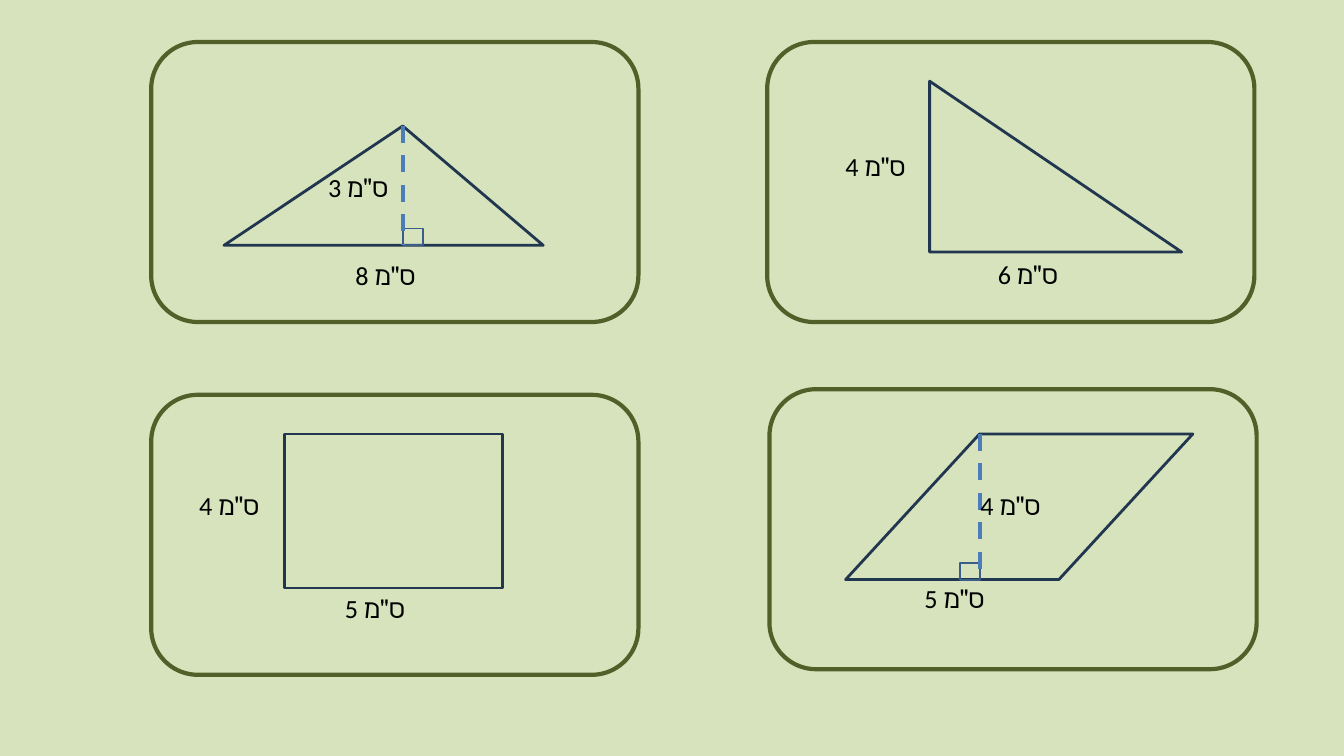
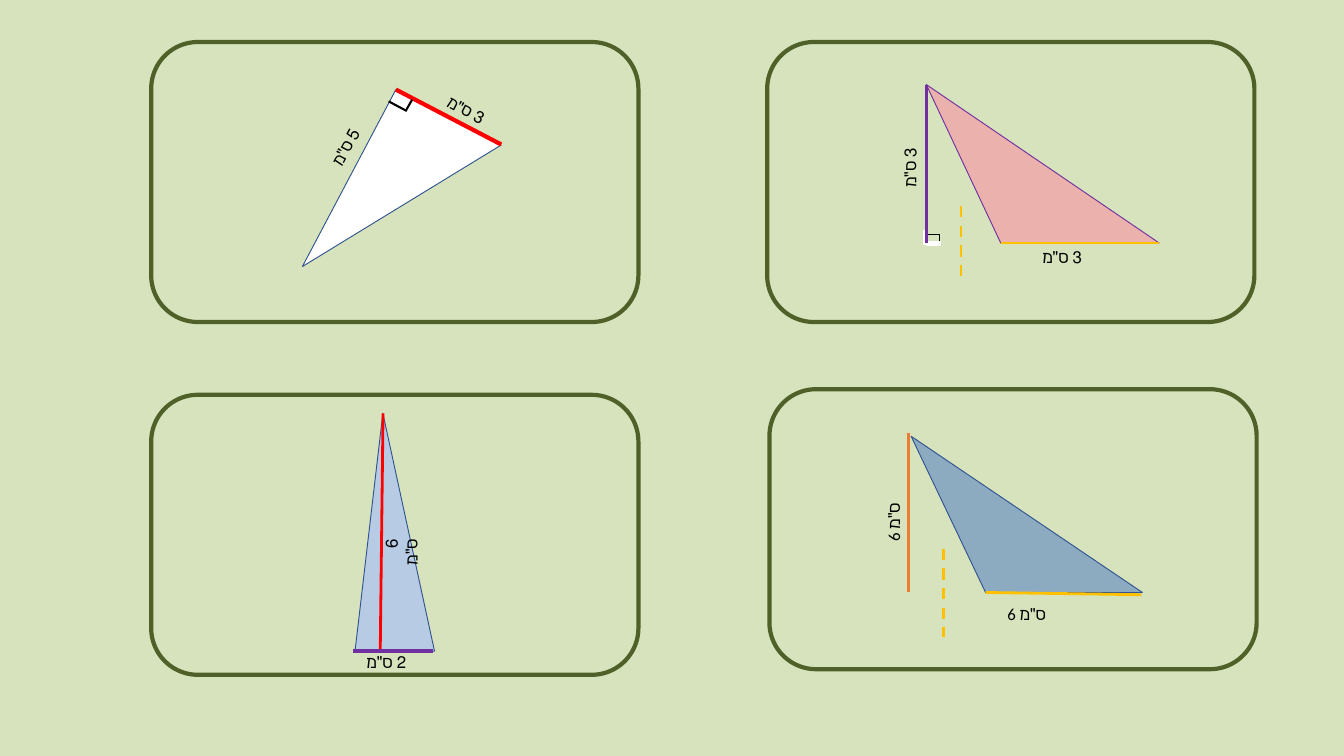
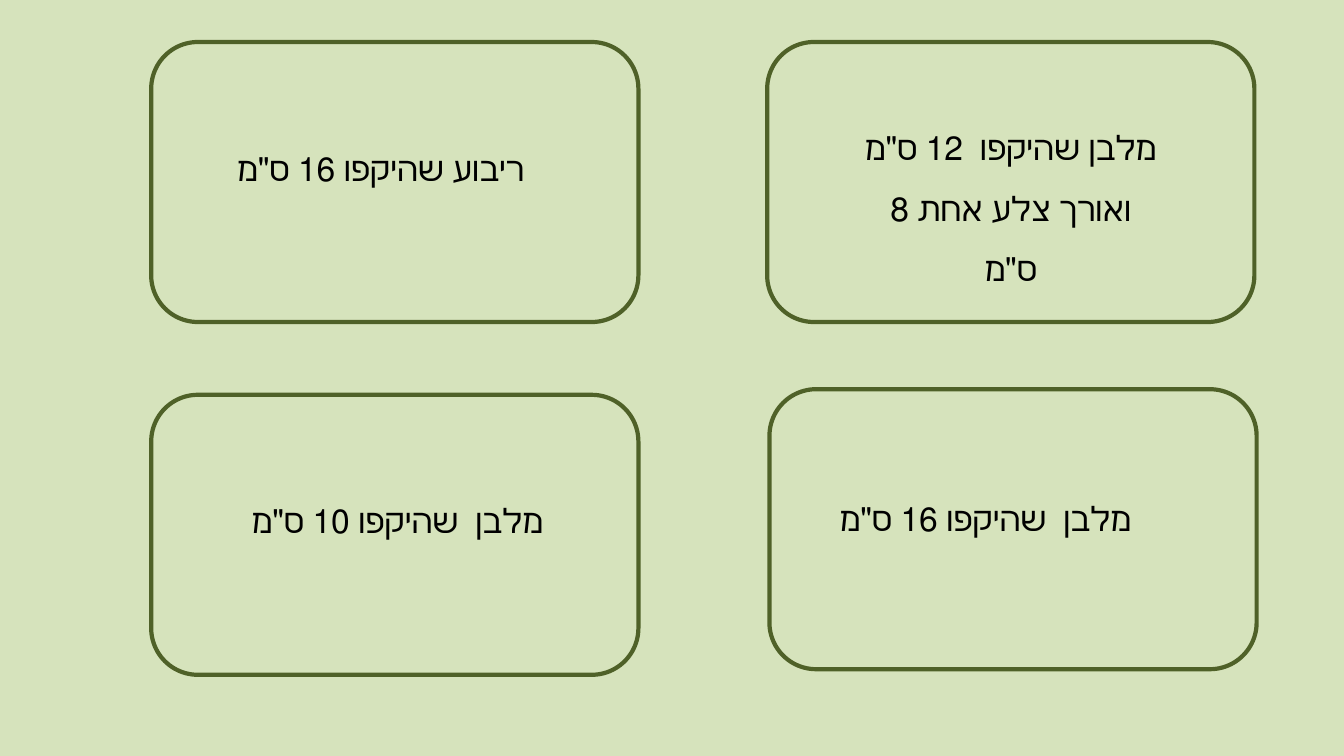
from dataclasses import dataclass
from typing import Any

from lxml.etree import SubElement
from pptx import Presentation
from pptx.dml.color import RGBColor
from pptx.enum.dml import MSO_LINE
from pptx.enum.shapes import MSO_CONNECTOR, MSO_SHAPE
from pptx.enum.text import MSO_AUTO_SIZE, PP_ALIGN
from pptx.oxml.ns import qn
from pptx.util import Inches, Pt


@dataclass(frozen=True)
class Theme:
    font: str = "Calibri"
    background: str = "D6E3BC"
    frame: str = "4F6128"
    outline: str = "21364F"
    corner: str = "395E89"
    height: str = "4A7DBA"
    black: str = "000000"
    white: str = "FFFFFF"
    red: str = "FF0000"
    yellow: str = "FFC000"
    orange: str = "ED7D31"
    purple: str = "7030A0"
    blue_edge: str = "31538F"
    blue: str = "4472C4"
    light_blue: str = "B7CCE4"
    pink: str = "FF819F"
    small: float = 18
    medium: float = 28
    large: float = 36


THEME = Theme()

# The slide is a grid of 240 columns and 135 rows of square cells.
SLIDE_WIDTH, SLIDE_HEIGHT = Inches(20), Inches(11.25)
CELL = SLIDE_WIDTH / 240
CARD_WIDTH, CARD_HEIGHT = 87, 50
CARD_PLACES = {
    "top_right": (137, 7.5),
    "bottom_right": (137.4, 69.5),
    "top_left": (27, 7.5),
    "bottom_left": (27, 70.5),
}
MEDIUM_LABEL = (16.3, 6.8)
SMALL_LABEL = (13.3, 4.8)
SIDE_LABEL = (12, 4.9)


def cells(count):
    return round(count * CELL)


def style_line(line, color, width, dashed=False):
    line.color.rgb = RGBColor.from_string(color)
    line.width = Pt(width)
    if dashed:
        line.dash_style = MSO_LINE.DASH


def style_shape(shape, fill, color, width, opacity=100):
    shape.shadow.inherit = False
    style_line(shape.line, color, width)
    if fill is None:
        shape.fill.background()
        return
    shape.fill.solid()
    shape.fill.fore_color.rgb = RGBColor.from_string(fill)
    if opacity < 100:
        color_element = shape.fill._xPr.find(qn("a:solidFill"))[0]
        SubElement(color_element, qn("a:alpha")).set("val", str(opacity * 1000))


@dataclass
class Card:
    """Draws parts at grid distances from the top left corner of a card."""
    shapes: Any
    left: float
    top: float

    def grouped(self):
        return Card(self.shapes.add_group_shape().shapes, self.left, self.top)

    def place(self, x, y):
        return cells(self.left + x), cells(self.top + y)

    def shape(self, kind, x, y, width, height, fill=None, color=THEME.outline,
              weight=3, adjustment=None, rotation=0):
        shape = self.shapes.add_shape(kind, *self.place(x, y), cells(width), cells(height))
        style_shape(shape, fill, color, weight)
        shape.rotation = rotation
        if adjustment is not None:
            shape.adjustments[0] = adjustment

    def polygon(self, points, fill, color, opacity=100):
        start, *others = [self.place(*point) for point in points]
        builder = self.shapes.build_freeform(*start)
        builder.add_line_segments(others, close=True)
        style_shape(builder.convert_to_shape(), fill, color, 1, opacity)

    def line(self, start, end, color, weight=3, dashed=False):
        connector = self.shapes.add_connector(
            MSO_CONNECTOR.STRAIGHT, *self.place(*start), *self.place(*end))
        style_line(connector.line, color, weight, dashed)
        SubElement(connector._element.spPr, qn("a:effectLst"))

    def text(self, text, x, y, size=MEDIUM_LABEL, points=THEME.medium, rotation=0,
             align=None, right_to_left=False, spacing=None, inset_left=0.1, inset_right=0.1):
        box = self.shapes.add_textbox(*self.place(x, y), *map(cells, size))
        box.rotation = rotation
        frame = box.text_frame
        frame.word_wrap = True
        frame.auto_size = MSO_AUTO_SIZE.SHAPE_TO_FIT_TEXT
        frame.margin_left, frame.margin_right = Inches(inset_left), Inches(inset_right)
        paragraph = frame.paragraphs[0]
        paragraph.alignment = align
        paragraph.line_spacing = spacing
        if right_to_left:
            paragraph.alignment = PP_ALIGN.RIGHT
            paragraph._p.get_or_add_pPr().set("rtl", "1")
        run = paragraph.add_run()
        run.text = text
        run.font.name = THEME.font
        run.font.size = Pt(points)
        run.font.color.rgb = RGBColor.from_string(THEME.black)

    def length(self, centimetres, x, y, **options):
        self.text(f'{centimetres} ס"מ', x, y, **options)

    def small_length(self, centimetres, x, y, size=SMALL_LABEL, right_to_left=True, **options):
        self.length(centimetres, x, y, size=size, points=THEME.small,
                    right_to_left=right_to_left, **options)

    def dashed_height(self, x, top, bottom, corner_x):
        """Dashed height with the square that marks its right angle."""
        self.shape(MSO_SHAPE.RECTANGLE, corner_x, bottom - 3, 3.5, 3,
                   color=THEME.corner, weight=2)
        self.line((x, top), (x, bottom), THEME.height, 4.5, dashed=True)


def right_triangle(card):
    card.shape(MSO_SHAPE.RIGHT_TRIANGLE, 29, 7, 45, 30.5)
    card.length(4, 12.8, 18.8)
    card.length(6, 40, 38)


def triangle_with_height(card):
    card.shape(MSO_SHAPE.ISOSCELES_TRIANGLE, 13, 15, 57, 21.3, adjustment=0.56)
    card.dashed_height(45, 15, 36.3, corner_x=45)
    card.length(8, 35.3, 38.2)
    card.length(3, 30.4, 22.5)


def parallelogram(card):
    card.shape(MSO_SHAPE.PARALLELOGRAM, 13.6, 8, 62, 26, adjustment=0.92)
    card.dashed_height(37.6, 8, 34, corner_x=34.1)
    card.length(5, 26.5, 33.9)
    card.length(4, 36.5, 17.3)


def rectangle(card):
    card.shape(MSO_SHAPE.RECTANGLE, 23.8, 7, 38.9, 27.5)
    card.length(5, 33.4, 34.6)
    card.length(4, 7.4, 16.3)


def tilted_triangle(card):
    card = card.grouped()
    card.polygon([(43.7, 8.5), (62.5, 18.4), (27, 40.1)], THEME.white, THEME.blue_edge)
    card.small_length(3, 47.9, 8.8, rotation=27.5)
    card.small_length(5, 27.1, 18.1, rotation=297.7)
    card.line((62.5, 18.3), (43.7, 8.5), THEME.red, 4.5)
    card.line((46.6, 10.3), (45.4, 12.4), THEME.black, 2.25)
    card.line((45.4, 12.2), (42.4, 10.6), THEME.black, 2.25)


def narrow_triangle(card):
    card = card.grouped()
    card.shape(MSO_SHAPE.ISOSCELES_TRIANGLE, 36.4, 3.3, 14.2, 42.5, fill=THEME.light_blue,
               color=THEME.blue_edge, weight=1, adjustment=0.35)
    card.line((41.4, 3.3), (40.9, 45.8), THEME.red)
    card.small_length(6, 37.6, 27.4, size=(10.4, 4.8), rotation=270, inset_left=0.3)
    card.small_length(2, 36.5, 45.2, size=(10.2, 4.8))
    card.line((36.1, 45.8), (50.3, 45.8), THEME.purple, 4.5)


def pink_obtuse_triangle(card):
    card = card.grouped()
    apex, foot, near, far = (28.4, 7.6), (28.4, 35.9), (41.7, 35.9), (70, 35.9)
    card.shape(MSO_SHAPE.RECTANGLE, 28.5, 34.3, 2.2, 1.9, color=THEME.black, weight=1)
    for x, y, rotation in ((28.5, 35.7, 0), (27, 34.6, 90)):
        card.shape(MSO_SHAPE.RECTANGLE, x, y, 2.4, 0.6, fill=THEME.white,
                   color=THEME.white, weight=1, rotation=rotation)
    card.polygon([near, apex, far], THEME.pink, THEME.purple, opacity=50)
    card.line(near, far, THEME.yellow)
    card.line(apex, foot, THEME.purple)
    card.line((34.6, 29.3), (34.6, 42.5), THEME.yellow, dashed=True)
    card.small_length(3, 45.4, 35.9, size=SIDE_LABEL)
    card.small_length(3, 19.5, 21.3, size=SIDE_LABEL, rotation=270)


def blue_obtuse_triangle(card):
    figure = card.grouped()
    near, far = (38.6, 36.3), (66.6, 36.3)
    figure.polygon([near, (25.3, 8.4), far], THEME.blue, THEME.blue_edge, opacity=50)
    figure.line(near, (66.4, 36.7), THEME.yellow)
    figure.line((24.8, 7.9), (24.8, 36.3), THEME.orange)
    figure.line((31.1, 28.5), (31.1, 44.3), THEME.yellow, dashed=True)
    card.small_length(6, 41.3, 37.7, size=SIDE_LABEL, right_to_left=False)
    card.small_length(6, 16.2, 19.9, size=SIDE_LABEL, right_to_left=False, rotation=270)


def statement(text, x, y, size=(65, 10.8), inset_right=0.35):
    """Return a function that writes a centred statement on a card."""
    def write(card):
        card.text(text, x, y, size=size, points=THEME.large, align=PP_ALIGN.CENTER,
                  spacing=1.5, inset_right=inset_right)
    return write


SLIDES = [
    {"top_right": right_triangle, "top_left": triangle_with_height,
     "bottom_right": parallelogram, "bottom_left": rectangle},
    {"top_left": tilted_triangle, "bottom_left": narrow_triangle,
     "top_right": pink_obtuse_triangle, "bottom_right": blue_obtuse_triangle},
    {"top_right": statement('מלבן שהיקפו  12 ס"מ ואורך צלע אחת 8 ס"מ', 16, 11,
                            size=(55, 21.7), inset_right=0.1),
     "top_left": statement('ריבוע שהיקפו 16 ס"מ', 10, 14.8),
     "bottom_right": statement('מלבן  שהיקפו 16 ס"מ', 7.6, 15.2),
     "bottom_left": statement('מלבן  שהיקפו 10 ס"מ', 13, 14.6)},
]


def add_card_slide(presentation, contents):
    slide = presentation.slides.add_slide(presentation.slide_layouts[6])
    slide.background.fill.solid()
    slide.background.fill.fore_color.rgb = RGBColor.from_string(THEME.background)
    cards = {name: Card(slide.shapes, *place) for name, place in CARD_PLACES.items()}
    for card in cards.values():
        card.shape(MSO_SHAPE.ROUNDED_RECTANGLE, 0, 0, CARD_WIDTH, CARD_HEIGHT,
                   color=THEME.frame, weight=4.5)
    for name, draw in contents.items():
        draw(cards[name])


def main():
    presentation = Presentation()
    presentation.slide_width, presentation.slide_height = SLIDE_WIDTH, SLIDE_HEIGHT
    for contents in SLIDES:
        add_card_slide(presentation, contents)
    presentation.save("out.pptx")


if __name__ == "__main__":
    main()
